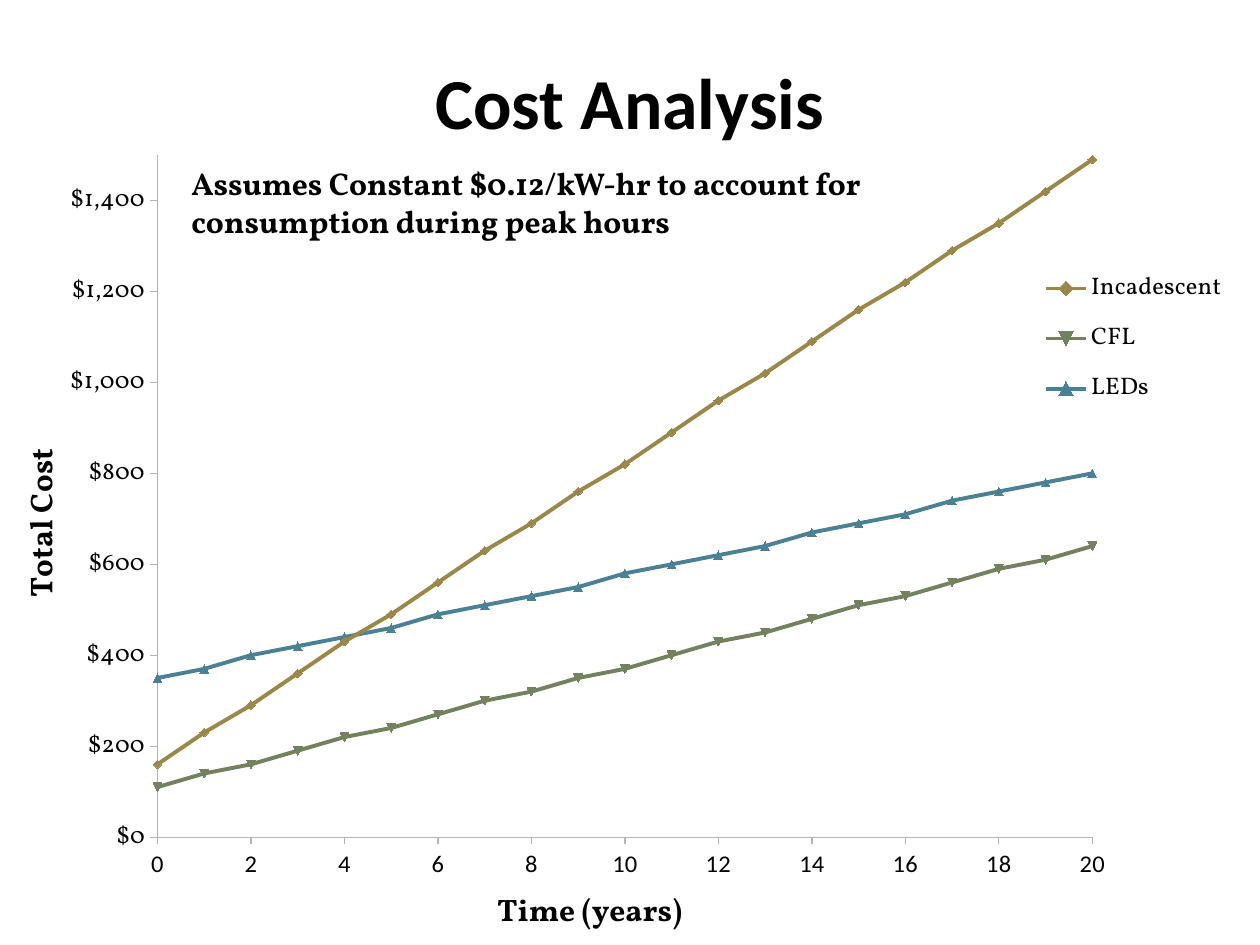
from dataclasses import dataclass

import lxml.etree
import pptx
import pptx.chart.data
import pptx.dml.color
import pptx.enum.chart
import pptx.enum.text
import pptx.oxml.ns
import pptx.util

WIDTH, HEIGHT = 10, 7.5
COLORS = {
    "text": "000000",
    "axis": "B3B3B3",
    "incandescent": "9B8848",
    "cfl": "72815E",
    "led": "4A8194",
}
HEADING_FONT, BODY_FONT = "Calibri", "Vollkorn"


@dataclass(frozen=True)
class Box:
    """A rectangle given as shares of its container."""
    left: float
    top: float
    width: float
    height: float

    def on_slide(self) -> tuple:
        return tuple(pptx.util.Inches(share * length) for share, length in
                     zip((self.left, self.top, self.width, self.height),
                         (WIDTH, HEIGHT, WIDTH, HEIGHT)))


@dataclass(frozen=True)
class CostLine:
    name: str
    color: str
    costs: tuple


@dataclass(frozen=True)
class AxisStyle:
    title: str
    title_left: float
    title_top: float
    tick_font: str
    maximum: int
    step: int
    number_format: str


COST_LINES = (
    CostLine("Incadescent", "incandescent",
             (160, 230, 290, 360, 430, 490, 560, 630, 690, 760, 820,
              890, 960, 1020, 1090, 1160, 1220, 1290, 1350, 1420, 1490)),
    CostLine("CFL", "cfl",
             (110, 140, 160, 190, 220, 240, 270, 300, 320, 350, 370,
              400, 430, 450, 480, 510, 530, 560, 590, 610, 640)),
    CostLine("LEDs", "led",
             (350, 370, 400, 420, 440, 460, 490, 510, 530, 550, 580,
              600, 620, 640, 670, 690, 710, 740, 760, 780, 800)),
)
TIME_AXIS = AxisStyle("Time (years)", 0.39, 0.94, HEADING_FONT, 20, 2, "General")
COST_AXIS = AxisStyle("Total Cost", 0.01, 0.39, BODY_FONT, 1500, 200,
                      "[$$-409]#,##0")


def rgb(name: str) -> pptx.dml.color.RGBColor:
    return pptx.dml.color.RGBColor.from_string(COLORS[name])


def style_font(font, name: str, size: float, bold: bool = False) -> None:
    font.name = name
    font.size = pptx.util.Pt(size)
    font.bold = bold
    font.color.rgb = rgb("text")


def add_text(slide, box: Box, text: str, font: str, size: float,
             alignment, anchor) -> None:
    text_frame = slide.shapes.add_textbox(*box.on_slide()).text_frame
    text_frame.word_wrap = True
    text_frame.vertical_anchor = anchor
    text_frame.text = text
    paragraph = text_frame.paragraphs[0]
    paragraph.alignment = alignment
    style_font(paragraph.runs[0].font, font, size, bold=True)


def place(element, successors: tuple, inner: bool = False, **shares: float) -> None:
    """Give a chart part a manual layout in shares of the chart."""
    qn = pptx.oxml.ns.qn
    for old in element.findall(qn("c:layout")):
        element.remove(old)
    layout = lxml.etree.Element(qn("c:layout"))
    manual = lxml.etree.SubElement(layout, qn("c:manualLayout"))
    settings = {"layoutTarget": "inner"} if inner else {}
    settings |= {"xMode": "edge", "yMode": "edge"} | shares
    for tag, value in settings.items():
        lxml.etree.SubElement(manual, qn(f"c:{tag}")).set("val", str(value))
    following = [child for child in element
                 if child.tag in {qn(f"c:{tag}") for tag in successors}]
    if following:
        following[0].addprevious(layout)
    else:
        element.append(layout)


def style_axis(axis, style: AxisStyle) -> None:
    axis.minimum_scale, axis.maximum_scale = 0, style.maximum
    axis.major_unit = style.step
    axis.has_major_gridlines = False
    axis.major_tick_mark = pptx.enum.chart.XL_TICK_MARK.OUTSIDE
    axis.minor_tick_mark = pptx.enum.chart.XL_TICK_MARK.NONE
    axis.format.line.color.rgb = rgb("axis")
    axis.format.line.width = pptx.util.Pt(0.75)
    axis.tick_labels.number_format = style.number_format
    axis.tick_labels.number_format_is_linked = False
    style_font(axis.tick_labels.font, style.tick_font, 14)
    text_frame = axis.axis_title.text_frame
    text_frame.text = style.title
    style_font(text_frame.paragraphs[0].runs[0].font, BODY_FONT, 18, bold=True)
    place(axis.axis_title._element, ("overlay", "spPr", "txPr"),
          x=style.title_left, y=style.title_top)


def add_cost_chart(slide, box: Box) -> None:
    data = pptx.chart.data.XyChartData()
    for line in COST_LINES:
        points = data.add_series(line.name)
        for year, cost in enumerate(line.costs):
            points.add_data_point(year, cost)
    chart = slide.shapes.add_chart(
        pptx.enum.chart.XL_CHART_TYPE.XY_SCATTER_SMOOTH,
        *box.on_slide(), data).chart
    chart.has_title = False
    style_font(chart.font, BODY_FONT, 14)
    style_axis(chart.category_axis, TIME_AXIS)
    style_axis(chart.value_axis, COST_AXIS)

    plot = chart.plots[0]
    plot.vary_by_categories = False
    for series, line in zip(plot.series, COST_LINES):
        color = rgb(line.color)
        series.smooth = True
        series.format.line.color.rgb = color
        series.format.line.width = pptx.util.Pt(2.25)
        series.marker.style = pptx.enum.chart.XL_MARKER_STYLE.AUTOMATIC
        series.marker.size = 5
        series.marker.format.fill.solid()
        series.marker.format.fill.fore_color.rgb = color
        series.marker.format.line.color.rgb = color

    chart.has_legend = True
    chart.legend.position = pptx.enum.chart.XL_LEGEND_POSITION.RIGHT
    chart.legend.include_in_layout = False
    style_font(chart.legend.font, BODY_FONT, 14)
    place(chart.legend._element, ("overlay", "spPr", "txPr"),
          x=0.82, y=0.15, w=0.16, h=0.21)
    plot_area = chart._chartSpace.chart.plotArea
    place(plot_area, ("scatterChart",), inner=True,
          x=0.125, y=0.024, w=0.742, h=0.859)


def main() -> None:
    presentation = pptx.Presentation()
    presentation.slide_width = pptx.util.Inches(WIDTH)
    presentation.slide_height = pptx.util.Inches(HEIGHT)
    slide = presentation.slides.add_slide(presentation.slide_layouts[6])
    align, anchor = pptx.enum.text.PP_ALIGN, pptx.enum.text.MSO_ANCHOR
    add_text(slide, Box(0.05, 0.023, 0.9, 0.167), "Cost Analysis",
             HEADING_FONT, 41, align.CENTER, anchor.MIDDLE)
    add_cost_chart(slide, Box(0, 0.144, 1, 0.856))
    add_text(slide, Box(0.142, 0.167, 0.667, 0.095),
             "Assumes Constant $0.12/kW-hr to account for consumption "
             "during peak hours",
             BODY_FONT, 18, align.LEFT, anchor.TOP)
    presentation.save("out.pptx")


if __name__ == "__main__":
    main()
